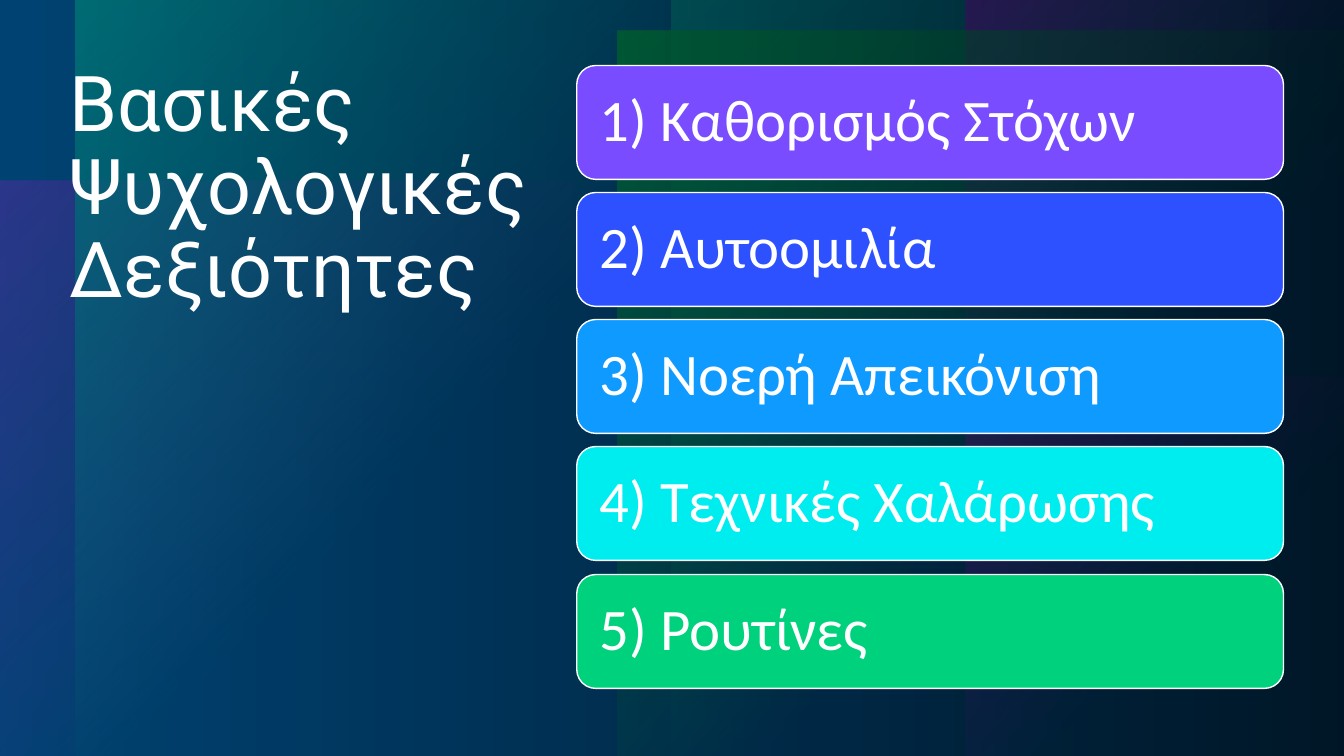
from dataclasses import dataclass

from pptx import Presentation
from pptx import util as u
from pptx.dml.color import RGBColor
from pptx.enum import shapes, text
from pptx.oxml import parse_xml
from pptx.oxml.ns import nsdecls

EMU_PER_PX = 9144  # 100 px to the inch
SLIDE_WIDTH, SLIDE_HEIGHT = 1333, 750
WHITE, BLUE, PURPLE, TEAL, GREEN = "FFFFFF", "0070C0", "794DFF", "00BAC8", "00D17D"
FROM_TOP_LEFT = '<a:path path="circle"><a:fillToRect r="100000" b="100000"/></a:path>'
LEFT_TO_RIGHT = '<a:lin ang="0" scaled="0"/>'


@dataclass
class Box:
    left: int
    top: int
    width: int
    height: int


@dataclass
class Glow:
    box: Box
    colour: str
    opacity: int = 100


@dataclass
class Stop:
    position: int
    colour: str
    opacity: int


@dataclass
class Skill:
    label: str
    colour: str


GLOWS = [
    Glow(Box(0, 179, 571, 571), PURPLE, 60),
    Glow(Box(666, 0, 591, 750), TEAL),
    Glow(Box(75, 0, 591, 750), TEAL),
    Glow(Box(958, 375, 375, 375), PURPLE),
    Glow(Box(958, 0, 375, 375), PURPLE),
    Glow(Box(613, 30, 720, 720), GREEN),
]
SKILLS = [
    Skill("1) Καθορισμός Στόχων", PURPLE),
    Skill("2) Αυτοομιλία", "2E51FF"),
    Skill("3) Νοερή Απεικόνιση", "0F9AFF"),
    Skill("4) Τεχνικές Χαλάρωσης", "00EDF0"),
    Skill("5) Ρουτίνες", GREEN),
]
FIRST_CARD = Box(572, 65, 701, 113)
LAST_CARD_TOP = 570


def px(length: int) -> u.Emu:
    return u.Emu(length * EMU_PER_PX)


def rgb(colour: str) -> RGBColor:
    return RGBColor.from_string(colour)


def add_box(slide, kind, box: Box):
    shape = slide.shapes.add_shape(
        kind, px(box.left), px(box.top), px(box.width), px(box.height))
    shape.shadow.inherit = False
    return shape


def add_gradient(slide, box: Box, stops: list[Stop], direction: str) -> None:
    shape = add_box(slide, shapes.MSO_SHAPE.RECTANGLE, box)
    shape.line.fill.background()
    stop_xml = "".join(
        f'<a:gs pos="{stop.position * 1000}"><a:srgbClr val="{stop.colour}">'
        f'<a:alpha val="{stop.opacity * 1000}"/></a:srgbClr></a:gs>'
        for stop in stops)
    gradient = parse_xml(
        f'<a:gradFill {nsdecls("a")} rotWithShape="1"><a:gsLst>{stop_xml}</a:gsLst>'
        f'{direction}</a:gradFill>')
    shape._element.spPr.insert(2, gradient)  # right after the geometry


def write(text_frame, words: str, font_name: str, size: int) -> None:
    text_frame.text = words
    text_frame.word_wrap = True
    text_frame.auto_size = text.MSO_AUTO_SIZE.NONE
    paragraph = text_frame.paragraphs[0]
    paragraph.alignment = text.PP_ALIGN.LEFT
    paragraph.line_spacing = 0.9
    font = paragraph.runs[0].font
    font.name, font.size = font_name, u.Pt(size)
    font.color.rgb = rgb(WHITE)


def add_backdrop(slide) -> None:
    slide.background.fill.solid()
    slide.background.fill.fore_color.rgb = rgb(BLUE)
    for glow in GLOWS:
        stops = [Stop(0, glow.colour, glow.opacity), Stop(60, glow.colour, 0)]
        add_gradient(slide, glow.box, stops, FROM_TOP_LEFT)
    shade = [Stop(0, "000000", 40), Stop(100, "000000", 80)]
    add_gradient(slide, Box(0, 0, SLIDE_WIDTH, SLIDE_HEIGHT), shade, LEFT_TO_RIGHT)


def place_title(slide) -> None:
    title = slide.shapes.title
    title.left, title.top = px(59), px(59)
    title.width, title.height = px(492), px(630)
    write(title.text_frame, "Βασικές Ψυχολογικές Δεξιότητες", "Roboto", 55)
    title.text_frame.vertical_anchor = text.MSO_ANCHOR.TOP
    slide.shapes._spTree.append(title._element)  # in front of the backdrop


def add_skill_card(slide, skill: Skill, top: int) -> None:
    box = Box(FIRST_CARD.left, top, FIRST_CARD.width, FIRST_CARD.height)
    card = add_box(slide, shapes.MSO_SHAPE.ROUNDED_RECTANGLE, box)
    card.fill.solid()
    card.fill.fore_color.rgb = rgb(skill.colour)
    card.line.color.rgb = rgb(WHITE)
    card.line.width = u.Pt(1)
    frame = card.text_frame
    write(frame, skill.label, "Calibri", 42)
    frame.vertical_anchor = text.MSO_ANCHOR.MIDDLE
    # The rounded corner already insets the text by about 6 px
    frame.margin_left = frame.margin_right = px(17)
    frame.margin_top = frame.margin_bottom = px(17)


def main() -> None:
    presentation = Presentation()
    presentation.slide_width = px(SLIDE_WIDTH)
    presentation.slide_height = px(SLIDE_HEIGHT)
    slide = presentation.slides.add_slide(presentation.slide_layouts[5])

    # Backdrop and title
    add_backdrop(slide)
    place_title(slide)

    # Evenly spaced skill cards
    travel = LAST_CARD_TOP - FIRST_CARD.top
    for index, skill in enumerate(SKILLS):
        top = FIRST_CARD.top + travel * index // (len(SKILLS) - 1)
        add_skill_card(slide, skill, top)

    presentation.save("out.pptx")


if __name__ == "__main__":
    main()
